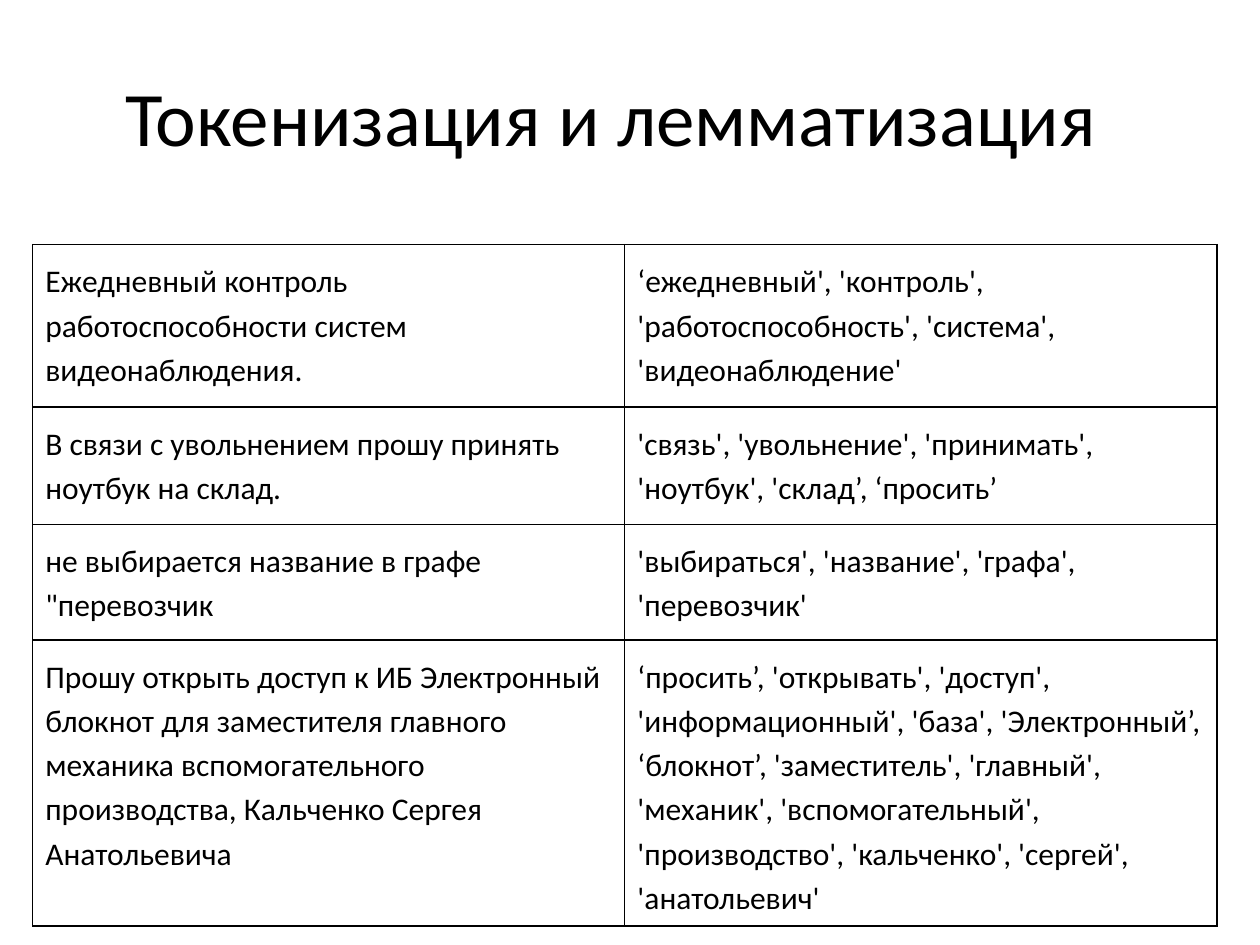
from lxml import etree
from pptx import Presentation
from pptx import util as u
from pptx.dml.color import RGBColor
from pptx.enum import text
from pptx.oxml.ns import qn

WIDE, HIGH = 10, 7.5
FONT, INK = "Calibri", "000000"
PAD = u.Inches(0.1)

PAIRS = [
    ("Ежедневный контроль работоспособности систем видеонаблюдения.",
     "‘ежедневный', 'контроль', 'работоспособность', 'система', 'видеонаблюдение'"),
    ("В связи с увольнением прошу принять ноутбук на склад.",
     "'связь', 'увольнение', 'принимать', 'ноутбук', 'склад’, ‘проcить’"),
    ("не выбирается название в графе \"перевозчик",
     "'выбираться', 'название', 'графа', 'перевозчик'"),
    ("Прошу открыть доступ к ИБ Электронный блокнот для заместителя главного "
     "механика вспомогательного производства, Кальченко Сергея Анатольевича",
     "‘просить’, 'открывать', 'доступ', 'информационный', 'база', "
     "'Электронный’, ‘блокнот’, 'заместитель', 'главный', 'механик', "
     "'вспомогательный', 'производство', 'кальченко', 'сергей', 'анатольевич'"),
]
ROWS = [1.29, 0.93, 0.92, 2.02]


def color(code):
    return RGBColor.from_string(code)


def write(frame, words, size=18, align=text.PP_ALIGN.LEFT, space=1.0):
    frame.word_wrap = True
    para = frame.paragraphs[0]
    para.alignment, para.line_spacing = align, space
    run = para.add_run()
    run.text = words
    run.font.size, run.font.name = u.Pt(size), FONT
    run.font.color.rgb = color(INK)


def inset(part):
    part.margin_left = part.margin_right = PAD
    part.margin_top = part.margin_bottom = PAD
    part.vertical_anchor = text.MSO_ANCHOR.TOP


def border(cell, width=0.75):
    props = cell._tc.get_or_add_tcPr()
    for spot, side in enumerate(("lnL", "lnR", "lnT", "lnB")):
        line = etree.Element(qn("a:" + side), w=str(u.Pt(width)))
        fill = etree.SubElement(line, qn("a:solidFill"))
        etree.SubElement(fill, qn("a:srgbClr"), val=INK)
        props.insert(spot, line)


def title(slide, box, words):
    frame = slide.shapes.add_textbox(*map(u.Inches, box)).text_frame
    inset(frame)
    write(frame, words, size=44, align=text.PP_ALIGN.CENTER)


def table(slide, box, pairs, rows):
    shape = slide.shapes.add_table(len(pairs), 2, *map(u.Inches, box))
    grid = shape.table
    grid.first_row = grid.horz_banding = False
    for col in grid.columns:
        col.width = u.Inches(box[2] / 2)
    for row, tall, pair in zip(grid.rows, rows, pairs):
        row.height = u.Inches(tall)
        for cell, words in zip(row.cells, pair):
            inset(cell)
            cell.fill.background()
            border(cell)
            write(cell.text_frame, words, space=1.15)


def main():
    deck = Presentation()
    deck.slide_width, deck.slide_height = u.Inches(WIDE), u.Inches(HIGH)
    slide = deck.slides.add_slide(deck.slide_layouts[6])
    left = 0.026 * WIDE
    # Heading
    title(slide, (left, 0.06 * HIGH, 0.932 * WIDE, 0.084 * HIGH),
          "Токенизация и лемматизация ")
    # Sentences and their lemmas
    table(slide, (left, 1.94, 0.94 * WIDE, sum(ROWS)), PAIRS, ROWS)
    deck.save("out.pptx")


if __name__ == "__main__":
    main()
